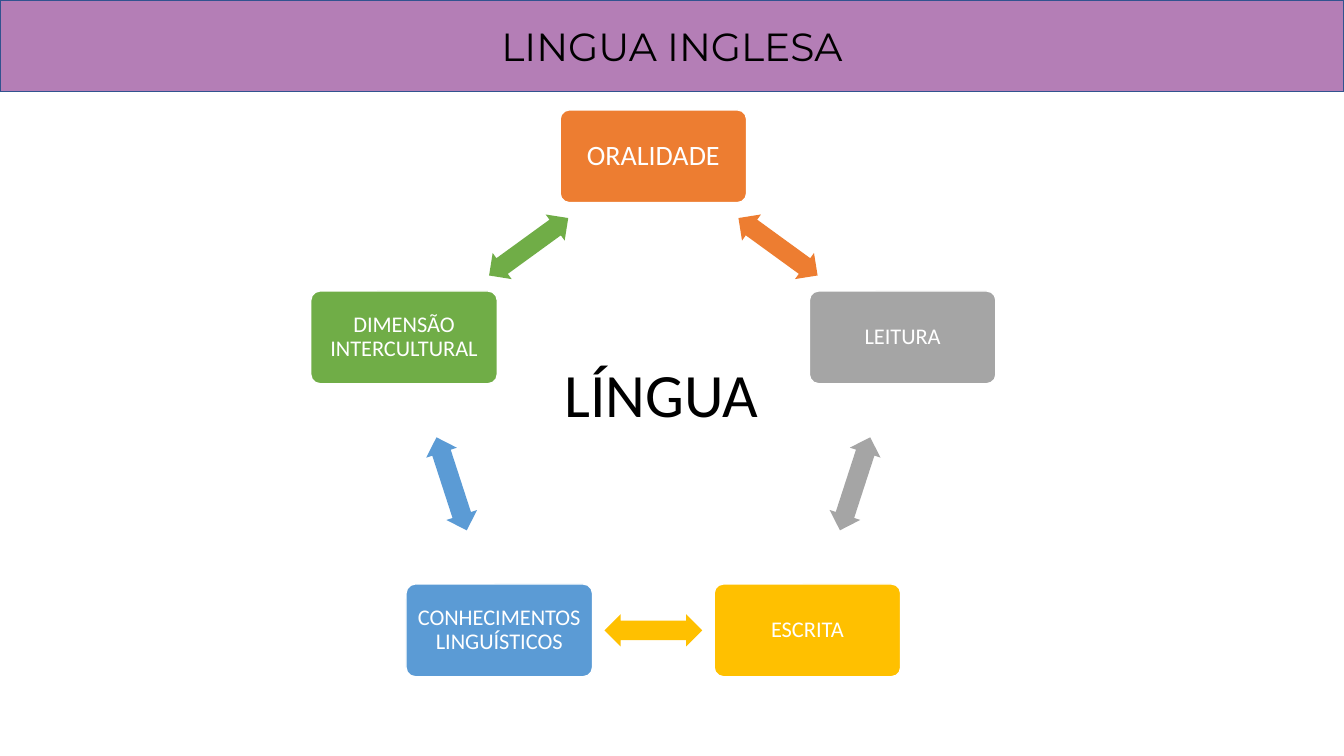
"""Builds the slide on the five axes of the English language subject."""
from math import cos, radians, sin

from pptx import Presentation
from pptx.dml.color import RGBColor
from pptx.enum.shapes import MSO_SHAPE as Shape
from pptx.enum.text import MSO_ANCHOR as Anchor, PP_ALIGN as Align
from pptx.util import Emu, Pt

PX = 9144
SLIDE_W, SLIDE_H = 1333, 750
CENTER_X, CENTER_Y, RADIUS = 648, 415, 260
BOX_W, BOX_H, BOX_MARGIN = 185, 92, 5
ARROW_W, ARROW_H = 97, 32
AXES = [
    ("ORALIDADE", "ED7D31", 20),
    ("LEITURA", "A5A5A5", 16),
    ("ESCRITA", "FFC000", 16),
    ("CONHECIMENTOS LINGUÍSTICOS", "5B9BD5", 16),
    ("DIMENSÃO INTERCULTURAL", "70AD47", 16),
]
STEP = 360 / len(AXES)


def px(length):
    return Emu(round(length * PX))


def color(code):
    return RGBColor.from_string(code)


def write(holder, words, size, font, code):
    frame = holder.text_frame
    frame.word_wrap = True
    frame.text = words
    paragraph = frame.paragraphs[0]
    paragraph.alignment = Align.CENTER
    style = paragraph.runs[0].font
    style.size, style.name = Pt(size), font
    style.color.rgb = color(code)
    return frame


def add_block(slide, kind, left, top, width, height, fill, outline=None):
    block = slide.shapes.add_shape(kind, px(left), px(top), px(width), px(height))
    block.shadow.inherit = False
    block.fill.solid()
    block.fill.fore_color.rgb = color(fill)
    if outline:
        block.line.color.rgb = color(outline)
        block.line.width = Pt(1)
    else:
        block.line.fill.background()
    return block


def add_banner(slide, words):
    banner = add_block(slide, Shape.RECTANGLE, 0, 0, SLIDE_W, 91, "B47EB6", "31538F")
    write(banner, words, 28, "Montserrat", "000000").vertical_anchor = Anchor.MIDDLE


def ring_point(index):
    angle = radians(index * STEP)
    return CENTER_X + RADIUS * sin(angle), CENTER_Y - RADIUS * cos(angle)


def add_axis(slide, index, words, fill, size):
    x, y = ring_point(index)
    box = add_block(slide, Shape.ROUNDED_RECTANGLE, x - BOX_W / 2, y - BOX_H / 2,
                    BOX_W, BOX_H, fill, "FFFFFF")
    box.adjustments[0] = 0.1
    frame = write(box, words, size, "Calibri", "FFFFFF")
    frame.vertical_anchor = Anchor.MIDDLE
    frame.margin_left = frame.margin_right = px(BOX_MARGIN)
    frame.margin_top = frame.margin_bottom = px(BOX_MARGIN)
    frame.paragraphs[0].line_spacing = 0.9


def add_arrow(slide, index, fill):
    (x1, y1), (x2, y2) = ring_point(index), ring_point(index + 1)
    arrow = add_block(slide, Shape.LEFT_RIGHT_ARROW, (x1 + x2 - ARROW_W) / 2,
                      (y1 + y2 - ARROW_H) / 2, ARROW_W, ARROW_H, fill)
    arrow.adjustments[0], arrow.adjustments[1] = 0.6, 0.5
    arrow.rotation = (index + 0.5) * STEP


def add_core(slide, words):
    core = slide.shapes.add_textbox(px(519), px(348), px(274), px(84))
    write(core, words, 44, "Calibri", "000000")


def main():
    deck = Presentation()
    deck.slide_width, deck.slide_height = px(SLIDE_W), px(SLIDE_H)
    slide = deck.slides.add_slide(deck.slide_layouts[6])
    add_banner(slide, "LINGUA INGLESA")
    for index, (words, fill, size) in enumerate(AXES):
        add_axis(slide, index, words, fill, size)
        add_arrow(slide, index, fill)
    add_core(slide, "LÍNGUA")
    deck.save("out.pptx")


if __name__ == "__main__":
    main()
